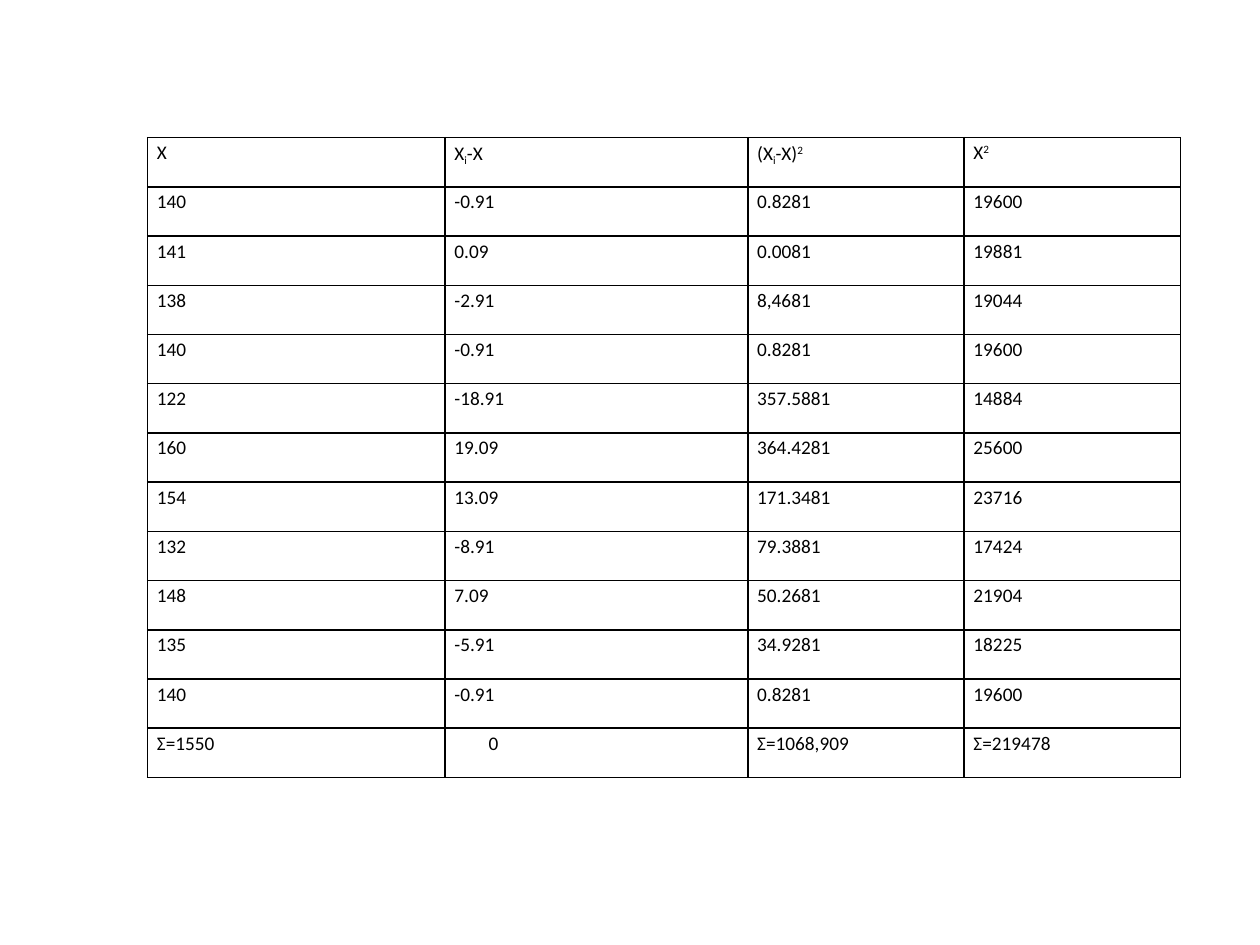
"""Build a slide with a table of deviations and squares."""
from lxml.etree import SubElement
from pptx import Presentation
from pptx.dml.color import RGBColor
from pptx.oxml.ns import qn
from pptx.util import Pt

HEADER = [
    [("X", 0)],
    [("X", 0), ("i", -25), ("-X", 0)],
    [("(X", 0), ("i", -25), ("-X)", 0), ("2", 30)],
    [("X", 0), ("2", 30)],
]
ROWS = [
    ("140", "-0.91", "0.8281", "19600"),
    ("141", "0.09", "0.0081", "19881"),
    ("138", "-2.91", "8,4681", "19044"),
    ("140", "-0.91", "0.8281", "19600"),
    ("122", "-18.91", "357.5881", "14884"),
    ("160", "19.09", "364.4281", "25600"),
    ("154", "13.09", "171.3481", "23716"),
    ("132", "-8.91", "79.3881", "17424"),
    ("148", "7.09", "50.2681", "21904"),
    ("135", "-5.91", "34.9281", "18225"),
    ("140", "-0.91", "0.8281", "19600"),
    ("Σ=1550", "0", "Σ=1068,909", "Σ=219478"),
]
COLUMN_WIDTHS = [170, 173, 123.6, 123.6]
LEFT, TOP, ROW_HEIGHT = 84.3, 78.7, 28.13
MARGIN, ZERO_INDENT = 5.4, 19.5
BLACK = "000000"


def color(value):
    return RGBColor.from_string(value)


def add_borders(cell):
    properties = cell._tc.get_or_add_tcPr()
    for position, side in enumerate(("lnL", "lnR", "lnT", "lnB")):
        line = properties.makeelement(qn(f"a:{side}"), {"w": str(Pt(1))})
        properties.insert(position, line)
        fill = SubElement(line, qn("a:solidFill"))
        SubElement(fill, qn("a:srgbClr"), val=BLACK)


def write_cell(cell, spans):
    cell.fill.background()
    add_borders(cell)
    cell.margin_left = cell.margin_right = Pt(MARGIN)
    cell.margin_top = cell.margin_bottom = 0
    para = cell.text_frame.paragraphs[0]
    para.line_spacing = 1.15
    para.font.size = Pt(11)
    para.font.name = "Calibri"
    para.font.color.rgb = color(BLACK)
    for text, baseline in spans:
        span = para.add_run()
        span.text = text
        if baseline:
            span.font._element.set("baseline", str(baseline * 1000))


def main():
    deck = Presentation()
    deck.slide_width, deck.slide_height = Pt(720), Pt(540)
    page = deck.slides.add_slide(deck.slide_layouts[6])
    content = [HEADER] + [[[(text, 0)] for text in row] for row in ROWS]
    table = page.shapes.add_table(
        len(content), len(COLUMN_WIDTHS), Pt(LEFT), Pt(TOP),
        Pt(sum(COLUMN_WIDTHS)), Pt(ROW_HEIGHT * len(content))).table
    table.first_row = table.horz_banding = False
    for column, width in zip(table.columns, COLUMN_WIDTHS):
        column.width = Pt(width)
    for row, values in zip(table.rows, content):
        row.height = Pt(ROW_HEIGHT)
        for cell, spans in zip(row.cells, values):
            write_cell(cell, spans)
    table.cell(len(ROWS), 1).margin_left = Pt(MARGIN + ZERO_INDENT)
    deck.save("out.pptx")


if __name__ == "__main__":
    main()
